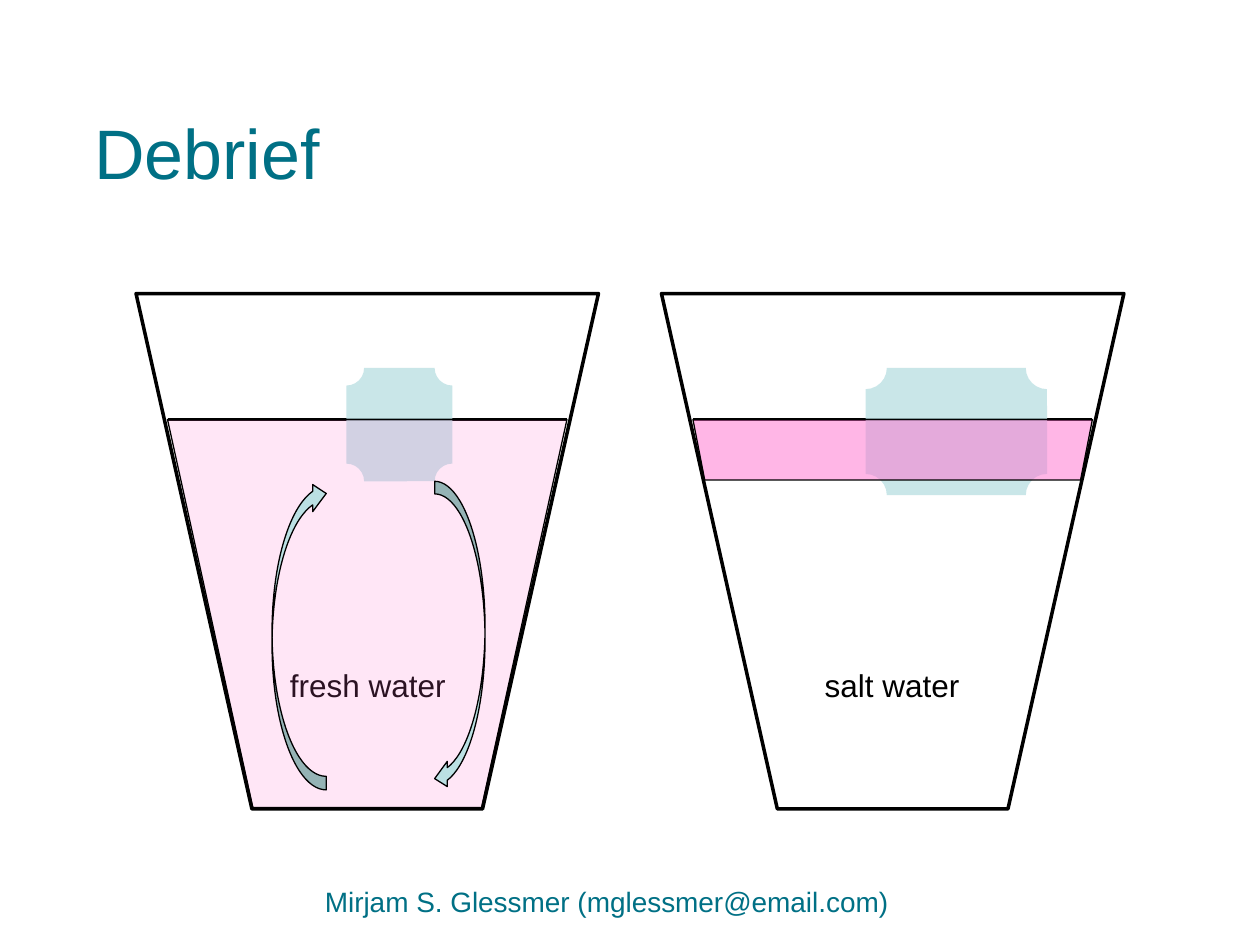
from pptx import Presentation
from pptx.dml.color import RGBColor
from pptx.enum.shapes import MSO_CONNECTOR, MSO_SHAPE as Preset
from pptx.enum.text import MSO_ANCHOR as Anchor, PP_ALIGN as Align
from pptx.oxml import parse_xml
from pptx.oxml.ns import nsdecls
from pptx.util import Inches, Pt

TEAL = RGBColor(0x00, 0x70, 0x85)
BLACK = RGBColor(0x00, 0x00, 0x00)
WHITE = RGBColor(0xFF, 0xFF, 0xFF)
ICE = RGBColor(0xBB, 0xE0, 0xE3)
PINK = RGBColor(0xFF, 0x6F, 0xCF)

deck = Presentation()
deck.slide_width = Inches(10)
deck.slide_height = Inches(7.5)
page = deck.slides.add_slide(deck.slide_layouts[6])


def add_text(text, left, top, width, height, size=18, color=BLACK,
             align=Align.CENTER, anchor=Anchor.TOP, margin=None, spacing=None):
    box = page.shapes.add_textbox(Inches(left), Inches(top), Inches(width), Inches(height))
    frame = box.text_frame
    frame.word_wrap = True
    frame.vertical_anchor = anchor
    if margin is not None:
        frame.margin_left = frame.margin_right = Inches(margin)
        frame.margin_top = frame.margin_bottom = Inches(margin)
    para = frame.paragraphs[0]
    para.alignment = align
    para.line_spacing = spacing
    span = para.add_run()
    span.text = text
    span.font.name = "Arial"
    span.font.size = Pt(size)
    span.font.color.rgb = color


def paint(shape, fill, line_width=0, opacity=100, flips=()):
    shape.shadow.inherit = False
    shape.fill.solid()
    shape.fill.fore_color.rgb = fill
    if opacity < 100:
        color = shape._element.spPr.find(".//{*}solidFill/{*}srgbClr")
        color.append(parse_xml(f'<a:alpha {nsdecls("a")} val="{opacity * 1000}"/>'))
    if line_width:
        shape.line.color.rgb = BLACK
        shape.line.width = Pt(line_width)
    else:
        shape.line.fill.background()
    for flip in flips:
        shape._element.spPr.xfrm.set(flip, "1")


add_text("Debrief", 0.75, 0.83, 8.5, 0.83, size=40, color=TEAL,
         align=Align.LEFT, anchor=Anchor.MIDDLE, margin=0, spacing=0.9)

for glass_left in (1.08, 5.25):
    rim = [(0, 2.33), (0.92, 6.42), (2.75, 6.42), (3.67, 2.33)]
    corners = [(Inches(glass_left + x), Inches(y)) for x, y in rim]
    outline = page.shapes.build_freeform(*corners[0])
    outline.add_line_segments(corners[1:], close=True)
    paint(outline.convert_to_shape(), WHITE, line_width=2)

    surface = page.shapes.add_connector(
        MSO_CONNECTOR.STRAIGHT, Inches(glass_left + 0.25), Inches(3.33),
        Inches(glass_left + 3.42), Inches(3.33))
    surface.line.color.rgb = BLACK
    surface.line.width = Pt(2)
    surface._element.spPr.append(parse_xml(f'<a:effectLst {nsdecls("a")}/>'))

for left, width, height in ((2.75, 0.84, 0.9), (6.87, 1.44, 1.01)):
    ice_cube = page.shapes.add_shape(
        Preset.PLAQUE, Inches(left), Inches(2.92), Inches(width), Inches(height))
    ice_cube.adjustments[0] = 0.167
    paint(ice_cube, ICE, opacity=79)

add_text("fresh water", 1.42, 5.24, 3, 0.5)
add_text("salt water", 5.58, 5.24, 3, 0.5)

for left, height, slant, opacity in ((5.5, 0.48, 0.195, 50), (1.33, 3.08, 0.22, 17)):
    dyed_water = page.shapes.add_shape(
        Preset.TRAPEZOID, Inches(left), Inches(3.33), Inches(3.17), Inches(height))
    dyed_water.adjustments[0] = slant
    paint(dyed_water, PINK, line_width=0.75, opacity=opacity, flips=("flipV",))

for left, top, width, flips in ((3.45, 3.82, 0.4, ()), (2.16, 3.81, 0.43, ("flipH", "flipV"))):
    current = page.shapes.add_shape(
        Preset.CURVED_LEFT_ARROW, Inches(left), Inches(top), Inches(width), Inches(2.46))
    paint(current, ICE, line_width=0.75, flips=flips)

add_text("Mirjam S. Glessmer (mglessmer@email.com)", 1.69, 6.97, 6.25, 0.37,
         size=16, color=TEAL)

deck.save("out.pptx")
